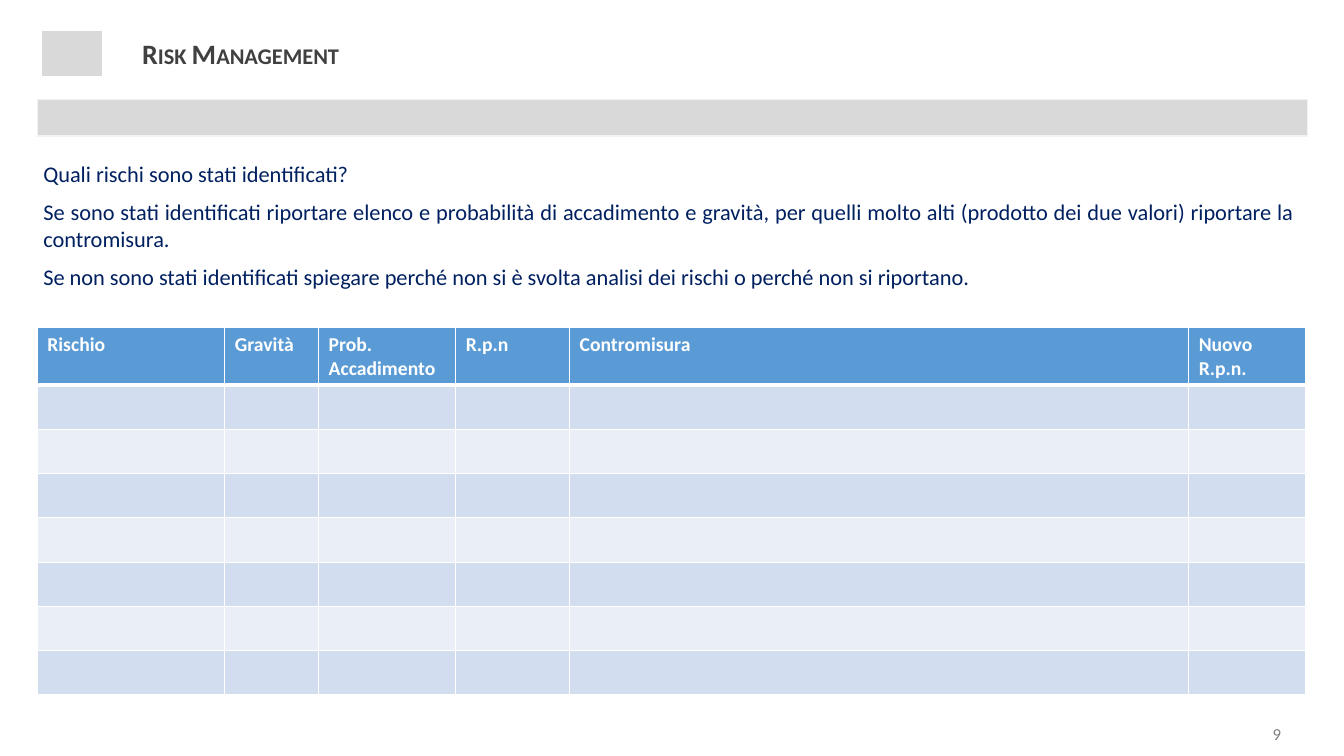
from lxml import etree
from pptx import Presentation
from pptx.dml.color import RGBColor
from pptx.enum.shapes import MSO_SHAPE
from pptx.enum.text import MSO_ANCHOR, PP_ALIGN
from pptx.oxml.ns import qn
from pptx.util import Inches, Pt

RECT, ROUNDED = MSO_SHAPE.RECTANGLE, MSO_SHAPE.ROUNDED_RECTANGLE
MIDDLE, TOP = MSO_ANCHOR.MIDDLE, MSO_ANCHOR.TOP
LEFT, CENTER, JUSTIFY = PP_ALIGN.LEFT, PP_ALIGN.CENTER, PP_ALIGN.JUSTIFY

WHITE = RGBColor(0xFF, 0xFF, 0xFF)
GREY = RGBColor(0xD9, 0xD9, 0xD9)
PALE_GREY = RGBColor(0xF2, 0xF2, 0xF2)
DARK_GREY = RGBColor(0x40, 0x40, 0x40)
MID_GREY = RGBColor(0x80, 0x80, 0x80)
NAVY = RGBColor(0x00, 0x20, 0x60)
BLUE = RGBColor(0x5B, 0x9B, 0xD5)
BANDS = (RGBColor(0xEA, 0xEF, 0xF7), RGBColor(0xD2, 0xDE, 0xEF))

QUESTIONS = (
    "Quali rischi sono stati identificati?",
    "Se sono stati identificati riportare elenco e probabilità di accadimento e gravità, "
    "per quelli molto alti (prodotto dei due valori) riportare la contromisura.",
    "Se non sono stati identificati spiegare perché non si è svolta analisi dei rischi "
    "o perché non si riportano.",
)
RISK_COLUMNS = (
    ("Rischio", 1.86),
    ("Gravità", 0.93),
    ("Prob. Accadimento", 1.36),
    ("R.p.n", 1.13),
    ("Contromisura", 6.14),
    ("Nuovo R.p.n.", 1.16),
)
RISK_ROWS = 7


class SlideBuilder:
    font = "Calibri"

    def __init__(self, slide):
        self.s = slide

    def style(self, p, size, color, bold=False, align=LEFT):
        p.alignment = align
        p.font.name = self.font
        p.font.size = Pt(size)
        p.font.bold = bold
        p.font.color.rgb = color

    def shape(self, kind, box, fill=None, line=None):
        sp = self.s.shapes.add_shape(kind, *map(Inches, box))
        sp.shadow.inherit = False
        if fill is None:
            sp.fill.background()
        else:
            sp.fill.solid()
            sp.fill.fore_color.rgb = fill
        if line is None:
            sp.line.fill.background()
        else:
            sp.line.color.rgb = line
            sp.line.width = Pt(0.75)
        return sp

    def text(self, box, lines, size, color, bold=False, align=LEFT, anchor=TOP):
        tf = self.s.shapes.add_textbox(*map(Inches, box)).text_frame
        tf.word_wrap = True
        tf.vertical_anchor = anchor
        tf.margin_left = tf.margin_top = tf.margin_bottom = Inches(0.06)
        tf.margin_right = Inches(0.1)
        tf.text = "\n".join(lines)
        for i, p in enumerate(tf.paragraphs):
            self.style(p, size, color, bold, align)
            p.space_before = Pt(8 if i else 0)
        return tf

    def page_number(self, box, number):
        tf = self.shape(ROUNDED, box).text_frame
        tf.word_wrap = False
        tf.vertical_anchor = MIDDLE
        tf.text = number
        self.style(tf.paragraphs[0], 12, MID_GREY, align=CENTER)

    def borders(self, cell, widths):
        tc_pr = cell._tc.get_or_add_tcPr()
        for side, width in zip("LRTB", widths):
            ln = etree.SubElement(tc_pr, qn(f"a:ln{side}"), w=str(Pt(width)))
            fill = etree.SubElement(ln, qn("a:solidFill"))
            etree.SubElement(fill, qn("a:srgbClr"), val=str(WHITE))

    def table(self, box, columns, body_rows, header_height, row_height):
        tbl = self.s.shapes.add_table(body_rows + 1, len(columns), *map(Inches, box)).table
        for c, (heading, width) in enumerate(columns):
            tbl.columns[c].width = Inches(width)
            tbl.cell(0, c).text = heading
            self.style(tbl.cell(0, c).text_frame.paragraphs[0], 14, WHITE, bold=True)
        for r, row in enumerate(tbl.rows):
            row.height = Inches(row_height if r else header_height)
            for cell in row.cells:
                self.borders(cell, (1, 1, 3 if r == 1 else 1, 1 if r else 3))
                cell.fill.solid()
                cell.fill.fore_color.rgb = BANDS[r % 2] if r else BLUE


def main():
    prs = Presentation()
    prs.slide_width, prs.slide_height = Inches(13.33), Inches(7.5)
    b = SlideBuilder(prs.slides.add_slide(prs.slide_layouts[6]))

    b.shape(RECT, (0.42, 0.31, 0.59, 0.44), GREY, GREY)
    b.shape(RECT, (0.37, 0.99, 12.6, 0.36), GREY, PALE_GREY)
    title = b.text((1.35, 0.11, 11.62, 0.83), ["Risk Management"], 20, DARK_GREY,
                   bold=True, anchor=MIDDLE)
    title.paragraphs[0].runs[0]._r.get_or_add_rPr().set("cap", "small")
    b.text((0.37, 1.53, 12.57, 1.5), QUESTIONS, 16, NAVY, align=JUSTIFY)
    b.page_number((12.39, 7.14, 0.55, 0.27), "9")
    b.table((0.37, 3.25, 12.58, 3.64), RISK_COLUMNS, RISK_ROWS, 0.56, 0.44)

    prs.save("out.pptx")


if __name__ == "__main__":
    main()
